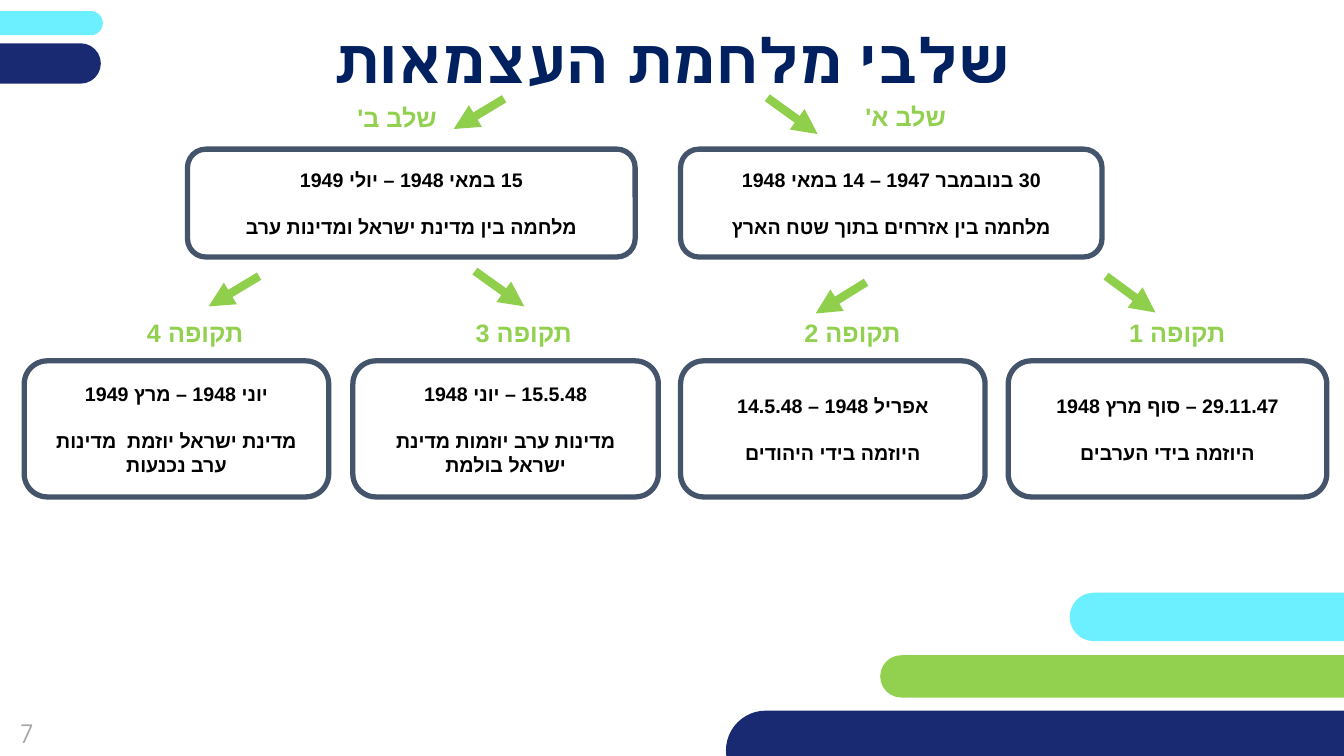
from lxml import etree
from pptx import Presentation
from pptx.dml.color import RGBColor
from pptx.enum.shapes import MSO_CONNECTOR, MSO_SHAPE
from pptx.enum.text import MSO_ANCHOR, PP_ALIGN
from pptx.oxml.ns import qn
from pptx.util import Inches, Pt

ROUNDED = MSO_SHAPE.ROUNDED_RECTANGLE
STRAIGHT = MSO_CONNECTOR.STRAIGHT
MIDDLE = MSO_ANCHOR.MIDDLE
CENTER, RIGHT = PP_ALIGN.CENTER, PP_ALIGN.RIGHT

NAVY = RGBColor(0x19, 0x2A, 0x72)
CYAN = RGBColor(0x6C, 0xF0, 0xFF)
GREEN = RGBColor(0x92, 0xD0, 0x50)
ARROW_GREEN = RGBColor(0x8F, 0xCF, 0x4B)
TITLE_BLUE = RGBColor(0x00, 0x20, 0x60)
SLATE = RGBColor(0x44, 0x54, 0x6A)
GREY = RGBColor(0xA6, 0xA6, 0xA6)
WHITE = RGBColor(0xFF, 0xFF, 0xFF)
BLACK = RGBColor(0x00, 0x00, 0x00)

MAIN_FONT = "TeX Gyre Adventor"
HEBREW_FONT = "Arial"

# left, top, width, height, colour
BARS = [
    (7.2, 7.05, 6.55, 0.79, NAVY),
    (10.61, 5.88, 3.82, 0.48, CYAN),
    (-1.34, 0.11, 2.36, 0.24, CYAN),
    (-2.25, 0.43, 3.25, 0.4, NAVY),
    (8.73, 6.5, 5.21, 0.42, GREEN),
]

STAGE_TOP, STAGE_HEIGHT = 1.48, 1.07
PERIOD_TOP, PERIOD_HEIGHT = 3.58, 1.35

# left, width, dates, description
STAGES = [
    (6.75, 4.18, "30 בנובמבר 1947 – 14 במאי 1948", "מלחמה בין אזרחים בתוך שטח הארץ"),
    (1.86, 4.44, "15 במאי 1948 – יולי 1949", "מלחמה בין מדינת ישראל ומדינות ערב"),
]
PERIODS = [
    (10, 3.16, "29.11.47 – סוף מרץ 1948", "היוזמה בידי הערבים"),
    (6.75, 3.02, "אפריל 1948 – 14.5.48", "היוזמה בידי היהודים"),
    (3.5, 3.03, "15.5.48 – יוני 1948", "מדינות ערב יוזמות מדינת ישראל בולמת"),
    (0.24, 3.02, "יוני 1948 – מרץ 1949", "מדינת ישראל יוזמת  מדינות ערב נכנעות"),
]

# left, top, width, text
LABELS = [
    (8.13, 0.96, 1.35, "שלב א'"),
    (3.08, 0.97, 1.35, "שלב ב'"),
    (10.9, 3.1, 1.35, "תקופה 1"),
    (7.5, 3.1, 1.53, "תקופה 2"),
    (4.26, 3.1, 1.51, "תקופה 3"),
    (0.98, 3.1, 1.53, "תקופה 4"),
]

# start x, start y, end x, end y
ARROWS = [
    (5, 0.98, 4.5, 1.28),
    (7.61, 0.97, 8.11, 1.33),
    (4.71, 2.69, 5.2, 3.04),
    (10.97, 2.74, 11.46, 3.1),
    (8.59, 2.8, 8.09, 3.11),
    (2.57, 2.74, 2.07, 3.04),
]


class SlideBuilder:
    def __init__(self, slide):
        self.slide = slide
        self.shapes = slide.shapes

    def set_text(self, paragraph, text, size, color, align=CENTER, bold=True,
                 font=MAIN_FONT, hebrew_font=HEBREW_FONT, rtl=True):
        paragraph.text = text
        paragraph.alignment = align
        if rtl:
            paragraph._p.get_or_add_pPr().set("rtl", "1")
        for run in paragraph.runs:
            run.font.size = Pt(size)
            run.font.bold = bold
            run.font.color.rgb = color
            run.font.name = font
            complex_script = etree.SubElement(run._r.get_or_add_rPr(), qn("a:cs"))
            complex_script.set("typeface", hebrew_font)

    def title(self, text):
        title = self.shapes.title
        title.left, title.top = Inches(0), Inches(0.19)
        title.width, title.height = Inches(13.33), Inches(0.79)
        frame = title.text_frame
        frame.margin_left = frame.margin_right = Inches(0)
        frame.margin_top = frame.margin_bottom = Inches(0)
        frame.vertical_anchor = MIDDLE
        self.set_text(frame.paragraphs[0], text, 44, TITLE_BLUE, hebrew_font=MAIN_FONT)

    def rounded(self, left, top, width, height, fill, roundness):
        shape = self.shapes.add_shape(
            ROUNDED, Inches(left), Inches(top), Inches(width), Inches(height))
        shape.adjustments[0] = roundness
        shape.shadow.inherit = False
        shape.fill.solid()
        shape.fill.fore_color.rgb = fill
        return shape

    def bar(self, left, top, width, height, color):
        self.rounded(left, top, width, height, color, 0.5).line.fill.background()

    def box(self, left, top, width, height, dates, description):
        shape = self.rounded(left, top, width, height, WHITE, 0.17)
        shape.line.color.rgb = SLATE
        shape.line.width = Pt(3.78)
        frame = shape.text_frame
        frame.word_wrap = True
        frame.vertical_anchor = MIDDLE
        self.set_text(frame.paragraphs[0], dates, 14, BLACK)
        paragraph = frame.add_paragraph()
        self.set_text(paragraph, description, 14, BLACK)
        paragraph.space_before = Pt(17)

    def text_box(self, left, top, width, height, text, **style):
        text_box = self.shapes.add_textbox(
            Inches(left), Inches(top), Inches(width), Inches(height))
        frame = text_box.text_frame
        frame.word_wrap = True
        frame.vertical_anchor = MIDDLE
        self.set_text(frame.paragraphs[0], text, 18, **style)

    def arrow(self, start_x, start_y, end_x, end_y):
        connector = self.shapes.add_connector(
            STRAIGHT, Inches(start_x), Inches(start_y), Inches(end_x), Inches(end_y))
        connector.line.color.rgb = ARROW_GREEN
        connector.line.width = Pt(6)
        head = etree.SubElement(connector.line._get_or_add_ln(), qn("a:tailEnd"))
        head.set("type", "triangle")
        etree.SubElement(connector._element.spPr, qn("a:effectLst"))


def main():
    presentation = Presentation()
    presentation.slide_width = Inches(13.33)
    presentation.slide_height = Inches(7.5)
    title_only = presentation.slide_layouts[5]
    builder = SlideBuilder(presentation.slides.add_slide(title_only))

    for bar in BARS:
        builder.bar(*bar)
    builder.text_box(-0.18, 6.99, 0.89, 0.57, "7", color=GREY, bold=False, rtl=False)
    builder.title("שלבי מלחמת העצמאות")
    for left, width, dates, description in STAGES:
        builder.box(left, STAGE_TOP, width, STAGE_HEIGHT, dates, description)
    for left, width, dates, description in PERIODS:
        builder.box(left, PERIOD_TOP, width, PERIOD_HEIGHT, dates, description)
    for left, top, width, text in LABELS:
        builder.text_box(left, top, width, 0.4, text, color=GREEN, align=RIGHT,
                         font=HEBREW_FONT)
    for arrow in ARROWS:
        builder.arrow(*arrow)

    presentation.save("out.pptx")


if __name__ == "__main__":
    main()
